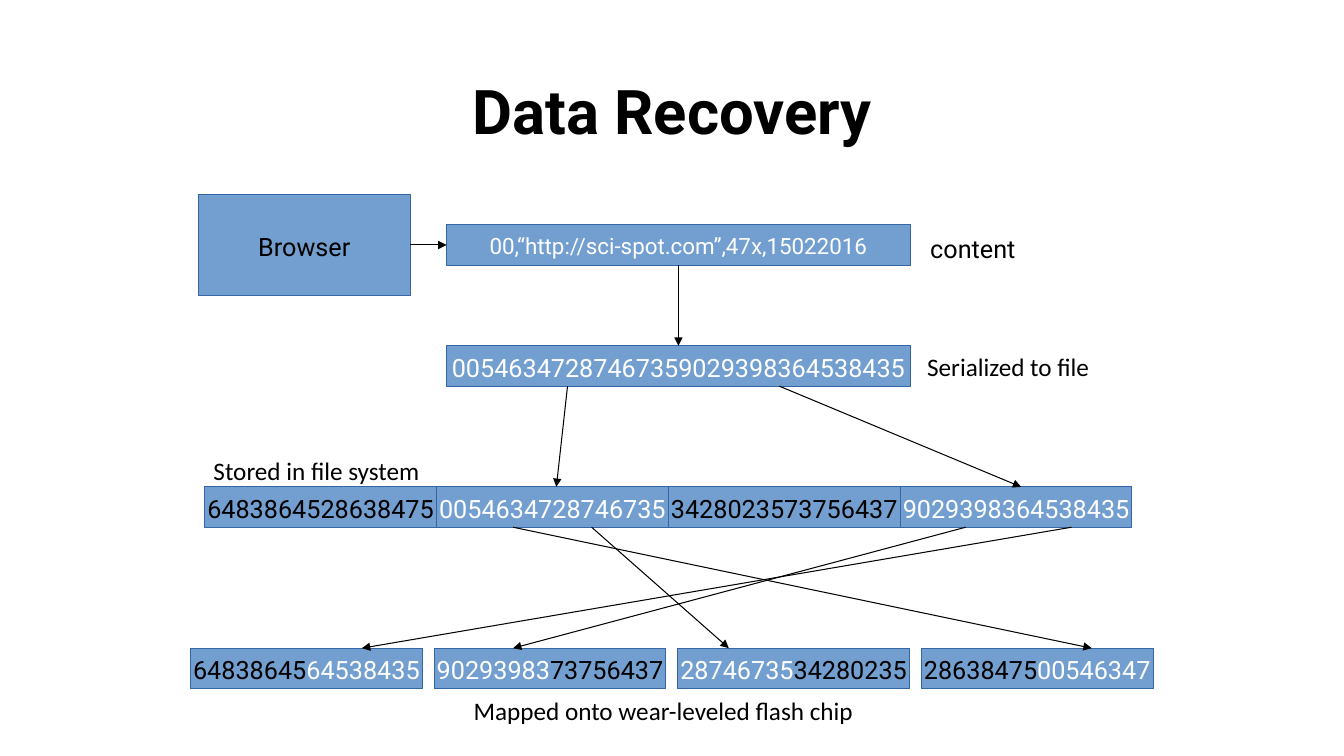
from lxml import etree
from pptx import Presentation
from pptx.dml.color import RGBColor
from pptx.enum.shapes import MSO_CONNECTOR, MSO_SHAPE
from pptx.enum.text import MSO_ANCHOR, PP_ALIGN
from pptx.oxml.ns import qn
from pptx.util import Pt

RECTANGLE = MSO_SHAPE.RECTANGLE
STRAIGHT = MSO_CONNECTOR.STRAIGHT
MIDDLE, TOP = MSO_ANCHOR.MIDDLE, MSO_ANCHOR.TOP
CENTER, LEFT = PP_ALIGN.CENTER, PP_ALIGN.LEFT
BLACK, WHITE, BLUE, DARK_BLUE = "000000", "FFFFFF", "729FCF", "3465A4"
BOX_HEIGHT = 28.8
BLOCK_WIDTH = 165.6
WIDE_LEFT, WIDE_WIDTH = 319, 2 * BLOCK_WIDTH
CONTENT_TOP, SERIALIZED_TOP, FILE_TOP, FLASH_TOP = 160.6, 247, 347.8, 463

presentation = Presentation()
presentation.slide_width, presentation.slide_height = Pt(960), Pt(540)
slide = presentation.slides.add_slide(presentation.slide_layouts[6])


def add_text(runs, left, top, width, height, fill=None, size=18, font="Roboto",
             bold=False, align=CENTER, anchor=MIDDLE, wrap=False, spacing=None):
    """Add a filled box, or a plain text box without fill; runs are (text, colour)."""
    bounds = Pt(left), Pt(top), Pt(width), Pt(height)
    if fill:
        shape = slide.shapes.add_shape(RECTANGLE, *bounds)
        shape.shadow.inherit = False
        shape.fill.solid()
        shape.fill.fore_color.rgb = RGBColor.from_string(fill)
        shape.line.color.rgb = RGBColor.from_string(DARK_BLUE)
        shape.line.width = Pt(0.75)
    else:
        shape = slide.shapes.add_textbox(*bounds)
    frame = shape.text_frame
    frame.word_wrap = wrap
    frame.vertical_anchor = anchor
    frame.margin_left = frame.margin_right = Pt(7.2)
    frame.margin_top, frame.margin_bottom = Pt(5), Pt(3.6)
    paragraph = frame.paragraphs[0]
    paragraph.alignment = align
    paragraph.line_spacing = spacing
    for text, color in runs:
        run = paragraph.add_run()
        run.text = text
        run.font.size = Pt(size)
        run.font.name = font
        run.font.bold = bold
        run.font.color.rgb = RGBColor.from_string(color)
    return shape


def add_arrow(start_x, start_y, end_x, end_y):
    arrow = slide.shapes.add_connector(
        STRAIGHT, Pt(start_x), Pt(start_y), Pt(end_x), Pt(end_y))
    arrow.line.color.rgb = RGBColor.from_string(BLACK)
    arrow.line.width = Pt(0.75)
    etree.SubElement(arrow.line._get_or_add_ln(), qn("a:tailEnd"), type="triangle")
    etree.SubElement(arrow._element.spPr, qn("a:effectLst"))
    return arrow


add_text([("Data Recovery", BLACK)], 66.2, 28.8, 828, 104.4,
         size=44, bold=True, wrap=True, spacing=0.9)

# Browser content and its serialized form
browser = add_text([("Browser", BLACK)], 141.8, 139, 151.2, 72, fill=BLUE)
content = add_text([("00,“http://sci-spot.com”,47x,15022016", WHITE)],
                   WIDE_LEFT, CONTENT_TOP, WIDE_WIDTH, BOX_HEIGHT, fill=BLUE, size=16)
serialized = add_text([("00546347287467359029398364538435", WHITE)],
                      WIDE_LEFT, SERIALIZED_TOP, WIDE_WIDTH, BOX_HEIGHT, fill=BLUE)

# Blocks in the file system and on the flash chip: left, pitch, top, blocks
block_rows = [
    (146.2, BLOCK_WIDTH, FILE_TOP, [
        [("6483864528638475", BLACK)],
        [("0054634728746735", WHITE)],
        [("3428023573756437", BLACK)],
        [("9029398364538435", WHITE)],
    ]),
    (136.1, 174, FLASH_TOP, [
        [("64838645", BLACK), ("64538435", WHITE)],
        [("90293983", WHITE), ("73756437", BLACK)],
        [("28746735", WHITE), ("34280235", BLACK)],
        [("28638475", BLACK), ("00546347", WHITE)],
    ]),
]
for row_left, pitch, row_top, blocks in block_rows:
    for column, runs in enumerate(blocks):
        add_text(runs, row_left + column * pitch, row_top,
                 BLOCK_WIDTH, BOX_HEIGHT, fill=BLUE)

# Arrows between the centres of box sides
for source, source_side, target, target_side in [
    (browser, 3, content, 1),
    (content, 2, serialized, 0),
]:
    arrow = add_arrow(0, 0, 0, 0)
    arrow.begin_connect(source, source_side)
    arrow.end_connect(target, target_side)

# Arrows from parts of one row to parts of the next
for source_top, target_top, spans in [
    (SERIALIZED_TOP, FILE_TOP, [(405.4, 397.4), (556.6, 729.4)]),
    (FILE_TOP, FLASH_TOP, [(366.5, 779.8), (422.6, 520.6),
                           (689.8, 366.5), (765.4, 258.5)]),
]:
    for start_x, end_x in spans:
        add_arrow(start_x, source_top + BOX_HEIGHT, end_x, target_top)

for caption, left, top, width, font in [
    ("content", 657.4, 162, 86.4, "Roboto"),
    ("Serialized to file", 655.2, 246.2, 141.1, "Calibri"),
    ("Stored in file system", 145.4, 320.4, 176.4, "Calibri"),
    ("Mapped onto wear-leveled flash chip", 331.2, 491.8, 306.7, "Calibri"),
]:
    add_text([(caption, BLACK)], left, top, width, 27.4,
             font=font, align=LEFT, anchor=TOP)

presentation.save("out.pptx")
